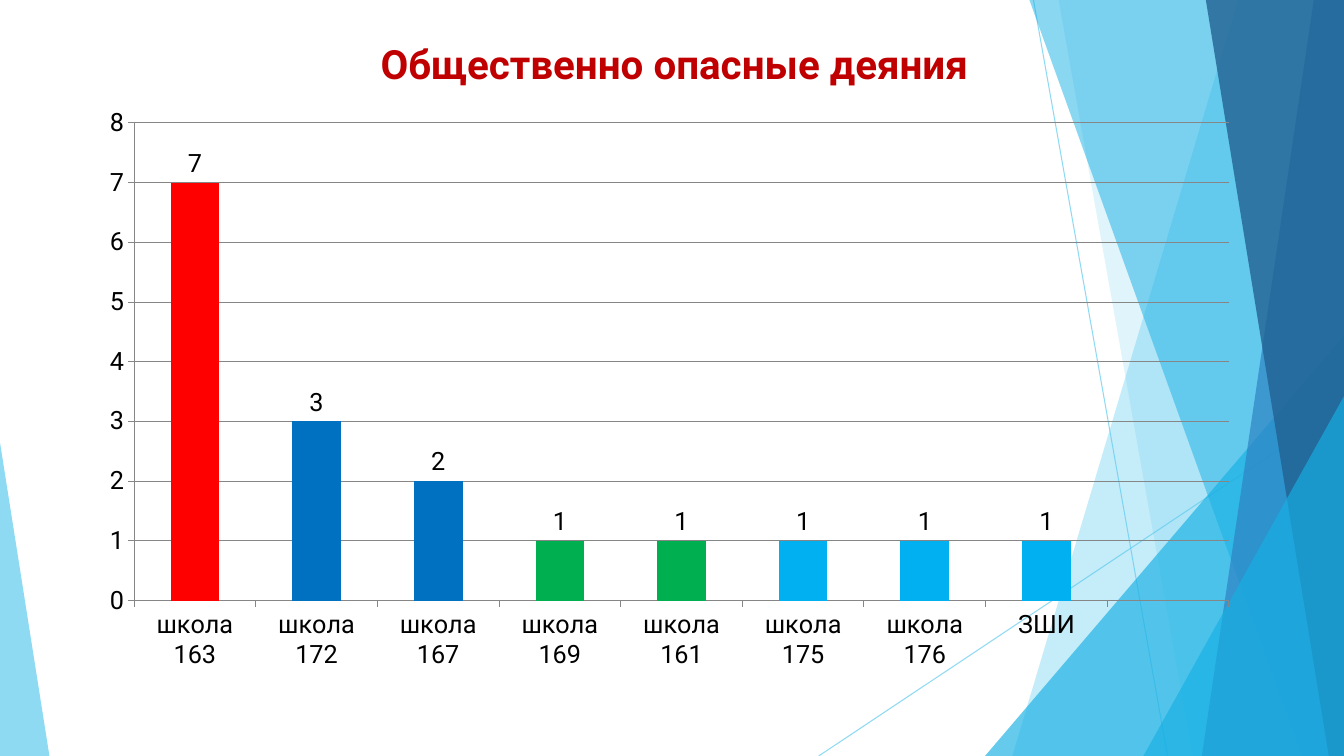
from lxml import etree
from pptx import Presentation
from pptx.chart.data import CategoryChartData as ChartData
from pptx.dml.color import RGBColor
from pptx.enum.chart import XL_CHART_TYPE as Chart, XL_LABEL_POSITION as Spot
from pptx.enum.chart import XL_TICK_MARK as Tick
from pptx.enum.shapes import MSO_CONNECTOR as Link, MSO_SHAPE as Shape
from pptx.enum.text import MSO_ANCHOR as Anchor, MSO_AUTO_SIZE as Fit, PP_ALIGN as Align
from pptx.oxml.ns import qn
from pptx.util import Inches, Pt

SKY = RGBColor(0x5F, 0xCB, 0xEF)
CYAN = RGBColor(0x17, 0xB0, 0xE4)
BLUE = RGBColor(0x2E, 0x83, 0xC3)
NAVY = RGBColor(0x22, 0x62, 0x92)
WINE = RGBColor(0xC0, 0x00, 0x00)
RED = RGBColor(0xFF, 0x00, 0x00)
COBALT = RGBColor(0x00, 0x70, 0xC0)
GREEN = RGBColor(0x00, 0xB0, 0x50)
AZURE = RGBColor(0x00, 0xB0, 0xF0)
BLACK = RGBColor(0, 0, 0)
GRAY = RGBColor(0x86, 0x86, 0x86)
WIDE, HIGH = 13.33, 7.5


class Deck:
    font = "Roboto"

    def __init__(self):
        self.file = Presentation()
        self.file.slide_width = Inches(WIDE)
        self.file.slide_height = Inches(HIGH)
        self.slide = self.file.slides.add_slide(self.file.slide_layouts[5])
        self.shapes = self.slide.shapes

    def fade(self, fill, color, alpha):
        fill.solid()
        fill.fore_color.rgb = color
        tint = fill._xPr.find(qn("a:solidFill"))[0]
        etree.SubElement(tint, qn("a:alpha")).set("val", str(alpha * 1000))

    def paint(self, shape, color, alpha):
        shape.shadow.inherit = False
        shape.line.fill.background()
        self.fade(shape.fill, color, alpha)

    def line(self, x1, y1, x2, y2, color, alpha):
        line = self.shapes.add_connector(Link.STRAIGHT, *map(Inches, (x1, y1, x2, y2)))
        line.line.width = Pt(0.75)
        self.fade(line.line.fill, color, alpha)
        etree.SubElement(line._element.spPr, qn("a:effectLst"))

    def band(self, top, foot, color, alpha):
        """Fill from a slanted left edge to the right side of the slide."""
        pen = self.shapes.build_freeform(Inches(top), 0)
        ends = [(WIDE, 0), (WIDE, HIGH), (foot, HIGH)]
        pen.add_line_segments([(Inches(x), Inches(y)) for x, y in ends])
        self.paint(pen.convert_to_shape(), color, alpha)

    def wedge(self, x, y, w, peak, color, alpha):
        box = map(Inches, (x, y, w, HIGH - y))
        shape = self.shapes.add_shape(Shape.ISOSCELES_TRIANGLE, *box)
        shape.adjustments[0] = peak
        self.paint(shape, color, alpha)

    def title(self, text, x, y, w, h):
        head = self.shapes.title
        head.left, head.top, head.width, head.height = map(Inches, (x, y, w, h))
        frame = head.text_frame
        frame.text = text
        frame.word_wrap = True
        frame.auto_size = Fit.NONE
        frame.vertical_anchor = Anchor.MIDDLE
        para = frame.paragraphs[0]
        para.alignment = Align.CENTER
        font = para.font
        font.name, font.size, font.bold = self.font, Pt(28.8), True
        font.color.rgb = WINE
        self.shapes._spTree.append(head._element)

    def bars(self, rows, x, y, w, h, plot):
        data = ChartData()
        data.categories = [name for name, _, _ in rows]
        data.add_series("Series 1", [value for _, value, _ in rows])
        box = map(Inches, (x, y, w, h))
        chart = self.shapes.add_chart(Chart.COLUMN_CLUSTERED, *box, data).chart
        chart.has_legend = chart.has_title = False
        chart.font.name, chart.font.size = self.font, Pt(18)
        chart.font.color.rgb = BLACK

        # Axes
        scale = chart.value_axis
        scale.minimum_scale, scale.maximum_scale, scale.major_unit = 0, 8, 1
        scale.has_major_gridlines = True
        scale.major_gridlines.format.line.color.rgb = GRAY
        for axis in (scale, chart.category_axis):
            axis.major_tick_mark = Tick.OUTSIDE
            axis.minor_tick_mark = Tick.NONE
            axis.format.line.color.rgb = GRAY

        # Columns and labels
        group = chart.plots[0]
        group.gap_width = 150
        group.vary_by_categories = False
        group.has_data_labels = True
        group.data_labels.show_value = True
        group.data_labels.position = Spot.OUTSIDE_END
        series = group.series[0]
        series.format.fill.solid()
        series.format.fill.fore_color.rgb = rows[0][2]
        for i, (_, _, color) in enumerate(rows[1:], 1):
            fill = series.points[i].format.fill
            fill.solid()
            fill.fore_color.rgb = color

        # Fixed plot area
        area = chart._chartSpace.chart.plotArea
        for old in area.findall(qn("c:layout")):
            area.remove(old)
        layout = etree.Element(qn("c:layout"))
        area.insert(0, layout)
        manual = etree.SubElement(layout, qn("c:manualLayout"))
        tags = ("layoutTarget", "xMode", "yMode", "x", "y", "w", "h")
        px, py, pw, ph = plot
        sizes = ((px - x) / w, (py - y) / h, pw / w, ph / h)
        for tag, val in zip(tags, ("inner", "edge", "edge", *sizes)):
            etree.SubElement(manual, qn("c:" + tag)).set("val", str(val))


def main():
    deck = Deck()

    # Backdrop
    deck.line(10.25, 0, 11.58, HIGH, SKY, 70)
    deck.line(WIDE, 4.03, 8.12, HIGH, SKY, 70)
    deck.band(12.28, 10.04, SKY, 36)
    deck.band(10.5, 11.83, SKY, 20)
    deck.wedge(9.77, 3.33, 3.56, 1, CYAN, 66)
    deck.band(10.21, 12.91, CYAN, 50)
    deck.band(13.03, 11.92, BLUE, 70)
    deck.band(11.96, 13.18, NAVY, 80)
    deck.wedge(11.34, 3.93, 1.99, 1, CYAN, 66)
    deck.wedge(0, 4.39, 0.49, 0, SKY, 70)

    # Title and chart
    deck.title("Общественно опасные деяния", 0.96, 0.4, 11.46, 0.46)
    rows = [
        ("школа 163", 7, RED),
        ("школа 172", 3, COBALT),
        ("школа 167", 2, COBALT),
        ("школа 169", 1, GREEN),
        ("школа 161", 1, GREEN),
        ("школа 175", 1, AZURE),
        ("школа 176", 1, AZURE),
        ("ЗШИ", 1, AZURE),
        ("", None, AZURE),
    ]
    deck.bars(rows, 0.86, 0.96, 11.56, 5.8, plot=(1.33, 1.22, 10.86, 4.74))
    deck.file.save("out.pptx")


if __name__ == "__main__":
    main()
